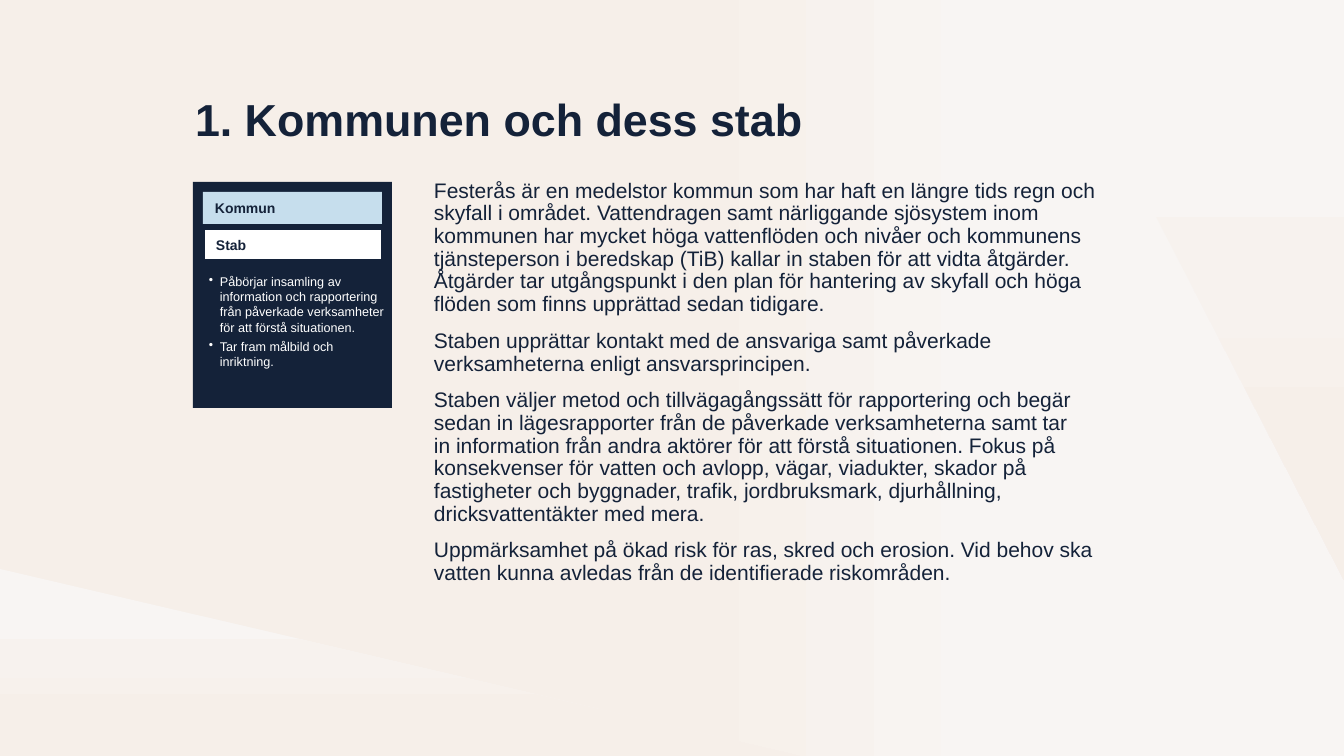
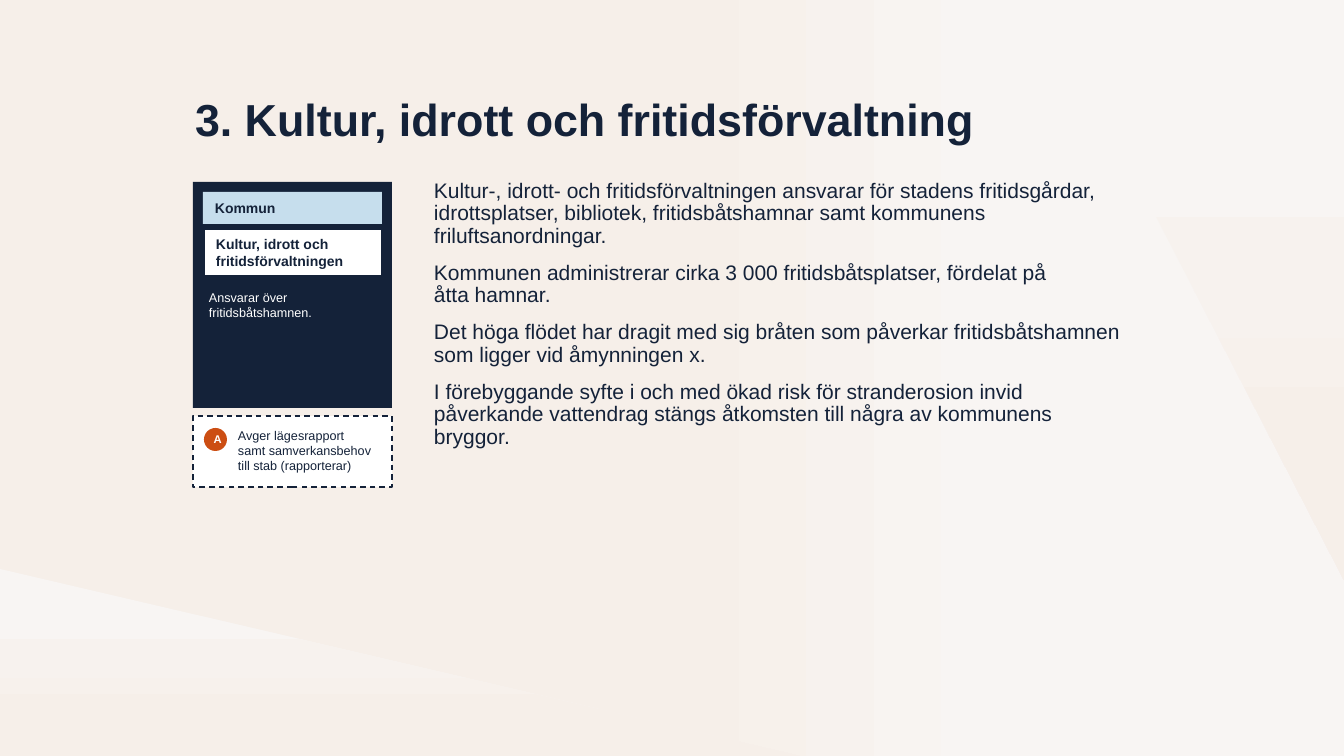
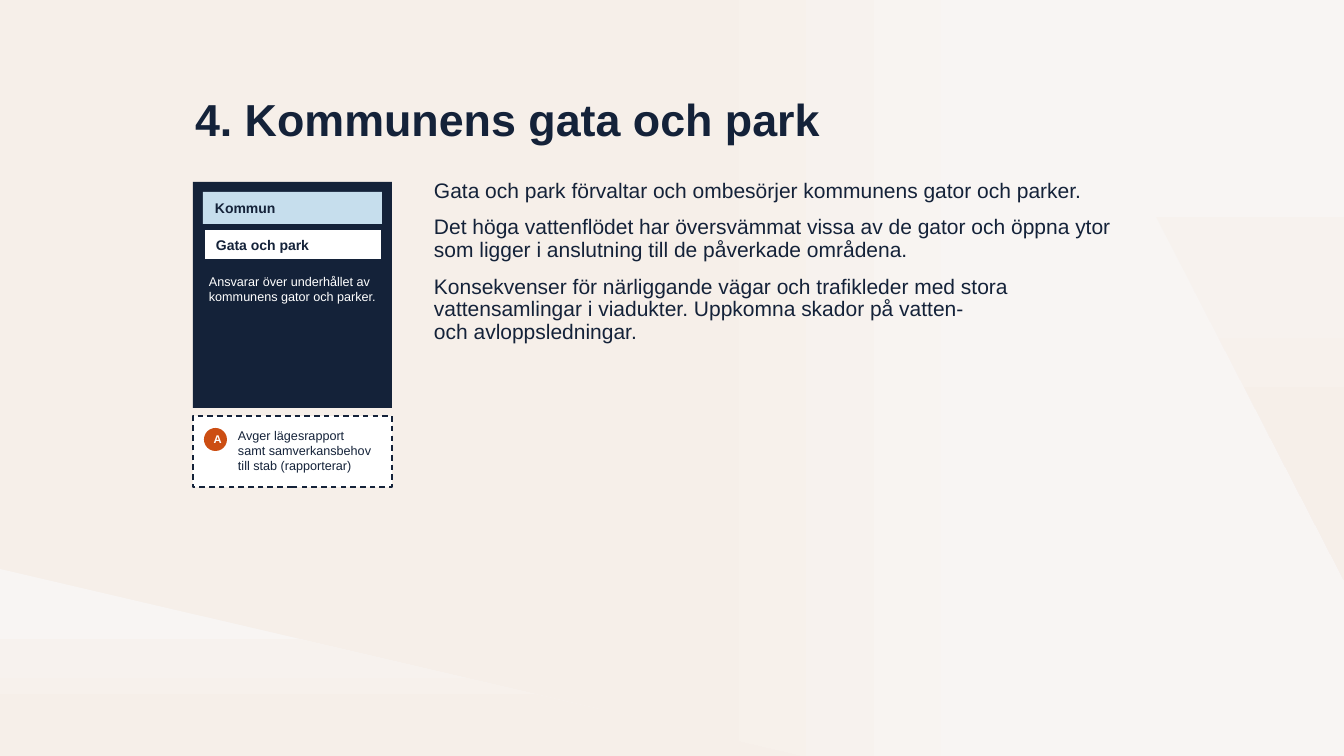
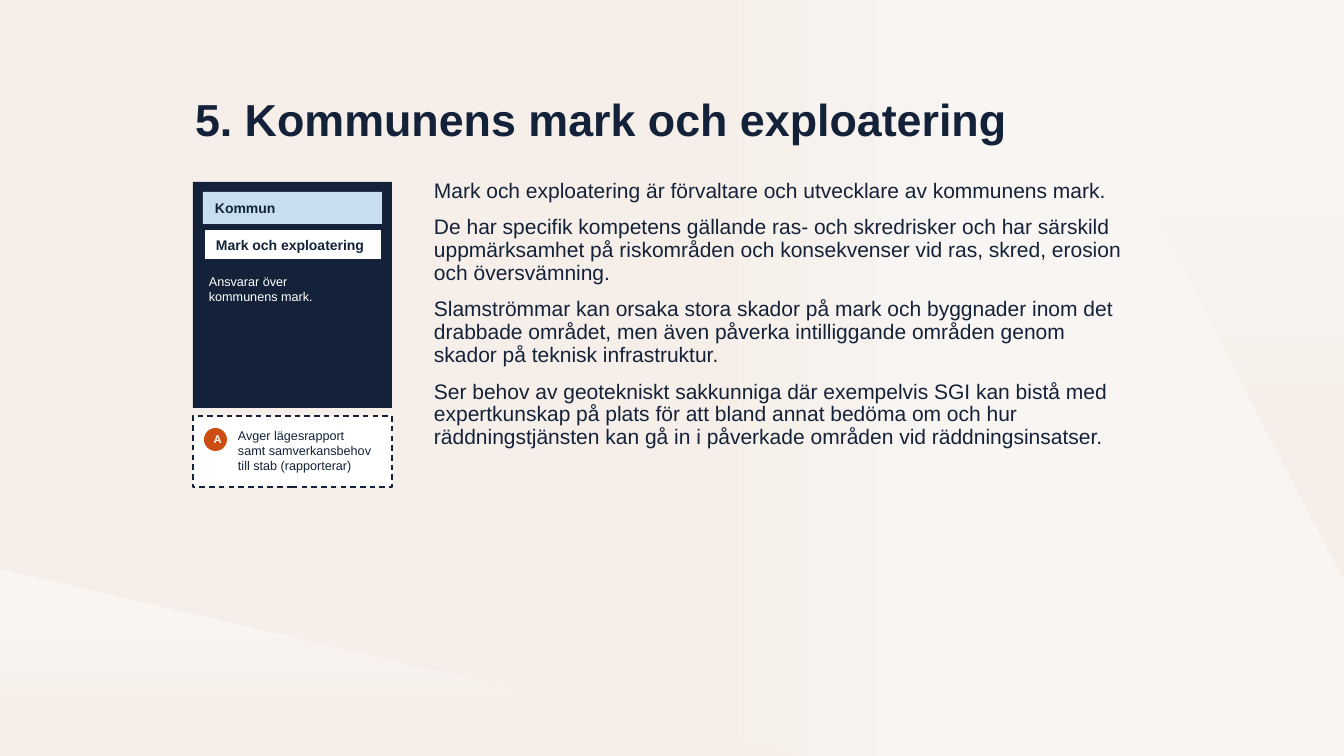
from copy import deepcopy

from pptx import Presentation
from pptx.dml.color import RGBColor
from pptx.enum.dml import MSO_LINE
from pptx.enum.shapes import MSO_SHAPE
from pptx.enum.text import MSO_ANCHOR, MSO_AUTO_SIZE, PP_ALIGN
from pptx.oxml import parse_xml
from pptx.oxml.ns import nsdecls, qn
from pptx.util import Emu, Pt

RECTANGLE, OVAL = MSO_SHAPE.RECTANGLE, MSO_SHAPE.OVAL
TOP, MIDDLE = MSO_ANCHOR.TOP, MSO_ANCHOR.MIDDLE
LEFT, CENTER = PP_ALIGN.LEFT, PP_ALIGN.CENTER
DASH = MSO_LINE.DASH
NO_FIT = MSO_AUTO_SIZE.NONE

EMU_PER_PX = 914400 / 100.8
WIDTH, HEIGHT = 1344, 756
TITLE_ONLY = 5
CARD_LEFT, CARD_WIDTH = 193, 199

FONT = "Arial"
NAVY, WHITE, SKY, RUST = "142239", "FFFFFF", "C6DEED", "CC4E13"
SAND, BLEND, CREAM = "F6EFE9", "F7F2EE", "F8F5F3"
PAPER = [(0, SAND), (0.5, SAND), (0.75, CREAM), (1, CREAM)]
FADE = [(0, CREAM), (0.25, CREAM), (0.5, BLEND), (0.75, SAND), (1, SAND)]
DOWNWARD = 270
REPORT = "Avger lägesrapport samt samverkansbehov till stab (rapporterar)"

UNITS = [
    {
        "title": "1. Kommunen och dess stab",
        "unit": "Stab",
        "tasks": [
            "Påbörjar insamling av information och rapportering från påverkade verksamheter för att förstå situationen.",
            "Tar fram målbild och inriktning.",
        ],
        "bullet": True,
        "reports": False,
        "body": [
            "Festerås är en medelstor kommun som har haft en längre tids regn och skyfall i området. Vattendragen samt närliggande sjösystem inom kommunen har mycket höga vattenflöden och nivåer och kommunens tjänsteperson i beredskap (TiB) kallar in staben för att vidta åtgärder. Åtgärder tar utgångspunkt i den plan för hantering av skyfall och höga flöden som finns upprättad sedan tidigare.",
            "Staben upprättar kontakt med de ansvariga samt påverkade verksamheterna enligt ansvarsprincipen.",
            "Staben väljer metod och tillvägagångssätt för rapportering och begär sedan in lägesrapporter från de påverkade verksamheterna samt tar \vin information från andra aktörer för att förstå situationen. Fokus på konsekvenser för vatten och avlopp, vägar, viadukter, skador på fastigheter och byggnader, trafik, jordbruksmark, djurhållning, dricksvattentäkter med mera.",
            "Uppmärksamhet på ökad risk för ras, skred och erosion. Vid behov ska vatten kunna avledas från de identifierade riskområden.",
        ],
    },
    {
        "title": "3. Kultur, idrott och fritidsförvaltning",
        "unit": "Kultur, idrott och fritidsförvaltningen",
        "unit_height": 47,
        "tasks": ["Ansvarar över fritidsbåtshamnen."],
        "body": [
            "Kultur-, idrott- och fritidsförvaltningen ansvarar för stadens fritidsgårdar, idrottsplatser, bibliotek, fritidsbåtshamnar samt kommunens friluftsanordningar.",
            "Kommunen administrerar cirka 3 000 fritidsbåtsplatser, fördelat på \våtta hamnar.",
            "Det höga flödet har dragit med sig bråten som påverkar fritidsbåtshamnen som ligger vid åmynningen x.",
            "I förebyggande syfte i och med ökad risk för stranderosion invid påverkande vattendrag stängs åtkomsten till några av kommunens bryggor.",
        ],
    },
    {
        "title": "4. Kommunens gata och park",
        "unit": "Gata och park",
        "tasks": ["Ansvarar över underhållet av kommunens gator och parker."],
        "body": [
            "Gata och park förvaltar och ombesörjer kommunens gator och parker.",
            "Det höga vattenflödet har översvämmat vissa av de gator och öppna ytor som ligger i anslutning till de påverkade områdena.",
            "Konsekvenser för närliggande vägar och trafikleder med stora vattensamlingar i viadukter. Uppkomna skador på vatten- \voch avloppsledningar.",
        ],
    },
    {
        "title": "5. Kommunens mark och exploatering",
        "unit": "Mark och exploatering",
        "tasks": ["Ansvarar över \vkommunens mark."],
        "body": [
            "Mark och exploatering är förvaltare och utvecklare av kommunens mark.",
            "De har specifik kompetens gällande ras- och skredrisker och har särskild uppmärksamhet på riskområden och konsekvenser vid ras, skred, erosion och översvämning.",
            "Slamströmmar kan orsaka stora skador på mark och byggnader inom det drabbade området, men även påverka intilliggande områden genom skador på teknisk infrastruktur.",
            "Ser behov av geotekniskt sakkunniga där exempelvis SGI kan bistå med expertkunskap på plats för att bland annat bedöma om och hur räddningstjänsten kan gå in i påverkade områden vid räddningsinsatser.",
        ],
    },
]


def px(length):
    return Emu(round(length * EMU_PER_PX))


def rgb(hex_code):
    return RGBColor.from_string(hex_code)


def add_bullet(para):
    properties = para._p.get_or_add_pPr()
    properties.set("marL", str(px(11)))
    properties.set("indent", str(-px(11)))
    properties.append(parse_xml(f'<a:buChar {nsdecls("a")} char="•"/>'))


def write(box, paragraphs, size, colour=NAVY, bold=False, align=LEFT, anchor=TOP,
          insets=(10, 5, 10, 5), line_spacing=None, before=0, after=0, bullet=False):
    frame = box.text_frame
    frame.word_wrap = True
    frame.auto_size = NO_FIT
    frame.vertical_anchor = anchor
    frame.margin_left, frame.margin_top, frame.margin_right, frame.margin_bottom = map(px, insets)
    for index, text in enumerate(paragraphs):
        para = frame.add_paragraph() if index else frame.paragraphs[0]
        para.text = text
        para.alignment = align
        para.line_spacing = line_spacing
        para.space_before = Pt(before if index else 0)
        para.space_after = Pt(after)
        if bullet:
            add_bullet(para)
        for span in para.runs:
            font = span.font
            font.name, font.size, font.bold = FONT, Pt(size), bold
            font.color.rgb = rgb(colour)
        for line_break in para._p.findall(qn("a:br")):
            line_break.insert(0, deepcopy(para.runs[0]._r.rPr))


class Deck:
    def __init__(self):
        self.deck = Presentation()
        self.deck.slide_width, self.deck.slide_height = px(WIDTH), px(HEIGHT)
        self.page = None

    def add_page(self, title):
        self.page = self.deck.slides.add_slide(self.deck.slide_layouts[TITLE_ONLY])
        box = self.page.shapes.title
        box.left, box.top, box.width, box.height = map(px, (185, 93, 941, 59))
        write(box, [title], 32, bold=True, anchor=MIDDLE, line_spacing=0.9)

    def polygon(self, points, stops, angle):
        builder = self.page.shapes.build_freeform(*points[0], scale=EMU_PER_PX)
        builder.add_line_segments(points[1:], close=True)
        shape = builder.convert_to_shape()
        shape.shadow.inherit = False
        shape.line.fill.background()
        shape.fill.gradient()
        shape.fill.gradient_angle = angle
        stop_list = shape.element.spPr.find(qn("a:gradFill")).find(qn("a:gsLst"))
        for _ in stops[2:]:
            stop_list.append(deepcopy(stop_list[0]))
        for stop, (position, colour) in zip(shape.fill.gradient_stops, stops):
            stop.position, stop.color.rgb = position, rgb(colour)
        return shape

    def master_backdrop(self):
        areas = [
            ([(0, 0), (WIDTH, 0), (WIDTH, HEIGHT), (0, HEIGHT)], PAPER, 0),
            ([(0, 569), (800, HEIGHT), (0, HEIGHT)], FADE, DOWNWARD),
            ([(1044, 0), (WIDTH, 580), (WIDTH, 0)], FADE, DOWNWARD),
        ]
        for number, area in enumerate(areas, 20):
            element = self.polygon(*area).element
            element.nvSpPr.cNvPr.id = number
            self.deck.slide_master.shapes.element.append(element)

    def box(self, left, top, width, height, fill, kind=RECTANGLE, line=None, dash=None):
        shape = self.page.shapes.add_shape(kind, *map(px, (left, top, width, height)))
        shape.shadow.inherit = False
        shape.fill.solid()
        shape.fill.fore_color.rgb = rgb(fill)
        if line:
            shape.line.color.rgb = rgb(line)
            shape.line.width = Pt(1)
            shape.line.dash_style = dash
        else:
            shape.line.fill.background()
        return shape

    def text(self, left, top, width, height, paragraphs, size, **style):
        box = self.page.shapes.add_textbox(*map(px, (left, top, width, height)))
        write(box, paragraphs, size, **style)

    def unit_card(self, unit, tasks, unit_height, bullet):
        card = self.box(CARD_LEFT, 182, CARD_WIDTH, 226, NAVY)
        write(card, tasks, 9, colour=WHITE, insets=(16, unit_height + 61, 8, 16),
              after=3 if bullet else 0, bullet=bullet)
        owner = self.box(203, 192, 179, 32, SKY)
        label = self.box(204, 229, 178, unit_height, WHITE, line=NAVY)
        for bar, name in ((owner, "Kommun"), (label, unit)):
            write(bar, [name], 10, bold=True, anchor=MIDDLE, insets=(12, 0, 8, 0))

    def report_card(self):
        self.box(CARD_LEFT, 416, CARD_WIDTH, 71, WHITE, line=NAVY, dash=DASH)
        self.text(228, 423, 154, 56, [REPORT], 9)
        badge = self.box(204, 428, 23, 23, RUST, kind=OVAL)
        write(badge, ["A"], 8, colour=WHITE, bold=True, align=CENTER, anchor=MIDDLE)

    def unit_page(self, title, unit, tasks, body, unit_height=31, bullet=False, reports=True):
        self.add_page(title)
        self.text(424, 175, 716, 432, body, 15, line_spacing=0.9, before=10)
        self.unit_card(unit, tasks, unit_height, bullet)
        if reports:
            self.report_card()


def main():
    builder = Deck()
    for unit in UNITS:
        builder.unit_page(**unit)
    builder.master_backdrop()
    builder.deck.save("out.pptx")


if __name__ == "__main__":
    main()
